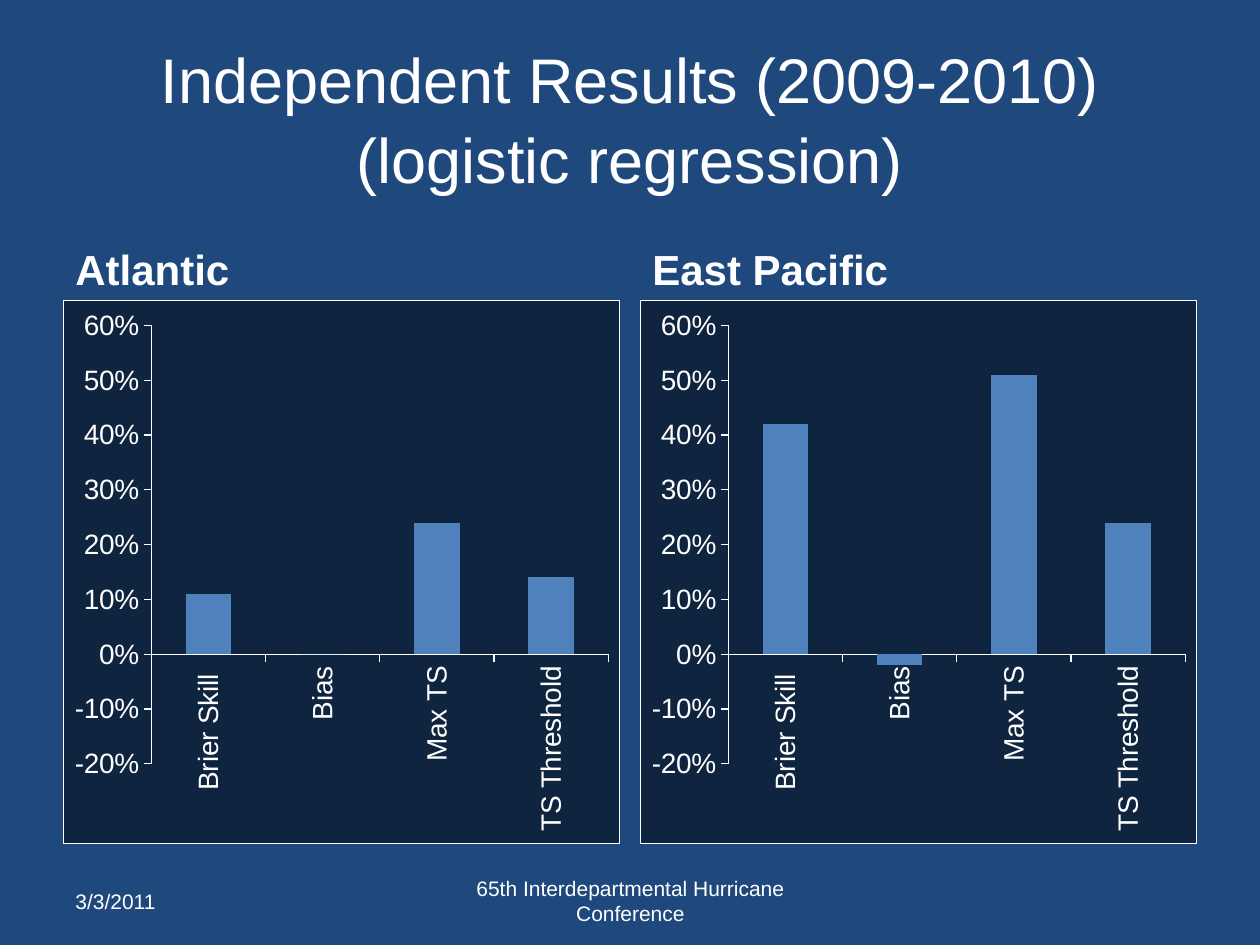
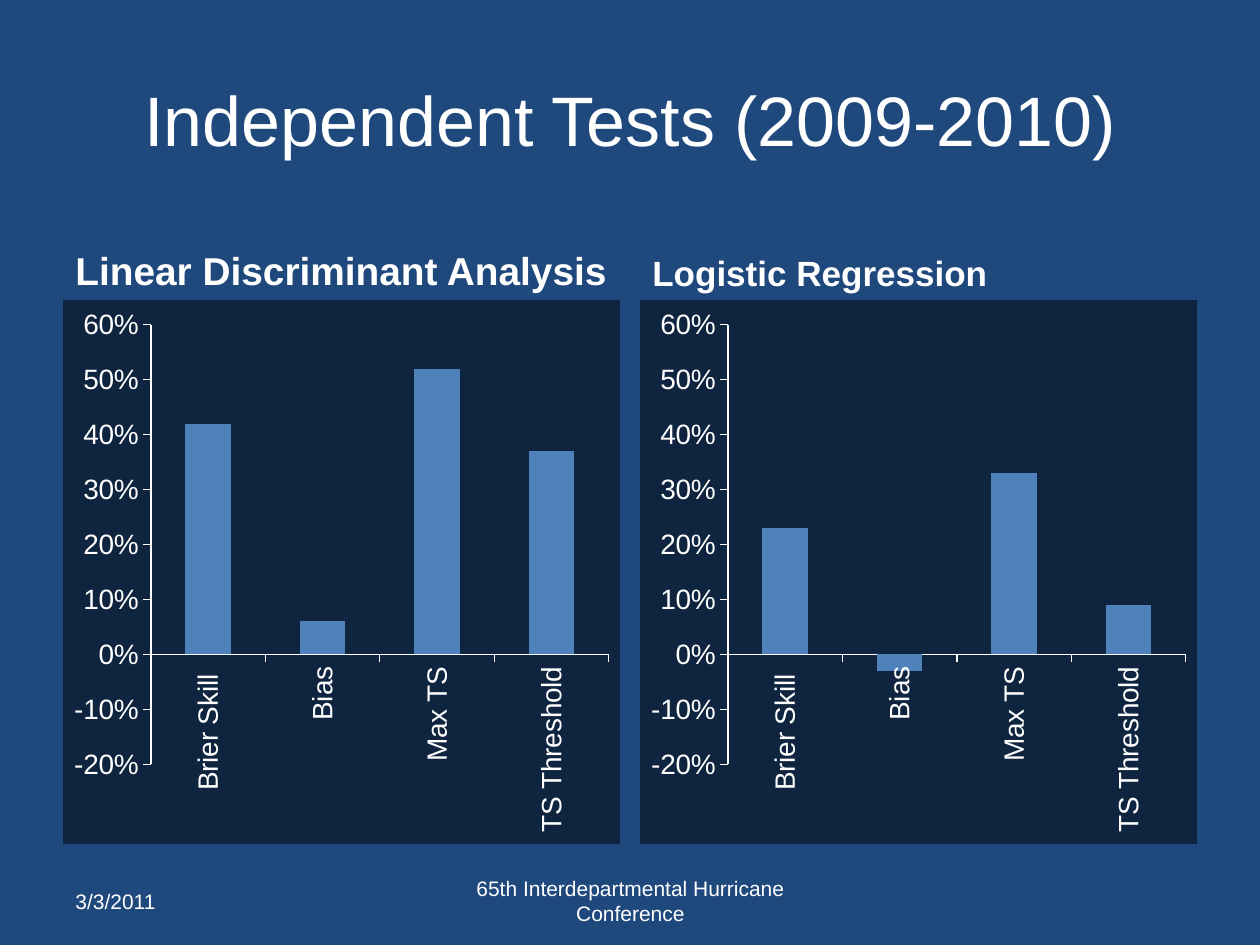
"""Builds two slides that compare forecast scores in paired column charts."""
import dataclasses

import pptx
import pptx.chart.data
import pptx.dml.color
import pptx.enum.chart
import pptx.enum.text
import pptx.oxml
import pptx.util

EMU_PER_PX = 914400 / 126
ALIGN = pptx.enum.text.PP_ALIGN
ANCHOR = pptx.enum.text.MSO_ANCHOR
DRAWING_NS = "http://schemas.openxmlformats.org/drawingml/2006/main"
CHART_NS = "http://schemas.openxmlformats.org/drawingml/2006/chart"

PAGE_SIZE = (1260, 945)
MARGIN, GAP = 63, 20
CONTENT_WIDTH = PAGE_SIZE[0] - 2 * MARGIN
PANEL_WIDTH = (CONTENT_WIDTH - GAP) // 2
SCORES = ("Brier Skill ", "Bias", "Max TS", "TS Threshold")


@dataclasses.dataclass(frozen=True)
class Theme:
    """Colours and type sizes shared by the deck."""
    font: str = "Arial"
    background: str = "1F497D"
    text: str = "FFFFFF"
    panel: str = "0F243E"
    column: str = "4F81BD"
    axis_size: float = 16
    footer_size: float = 12
    line_spacing: float = 1.05


def px(length):
    """Turn px into EMU."""
    return pptx.util.Emu(round(length * EMU_PER_PX))


def rgb(colour):
    """Turn a hex string into a colour."""
    return pptx.dml.color.RGBColor.from_string(colour)


class Painter:
    """Holds the theme and the current slide."""

    def __init__(self, deck, theme):
        """Keep the deck and its theme."""
        self.deck, self.theme, self.page = deck, theme, None

    def new_page(self):
        """Start a blank slide with the background and the footer."""
        self.page = self.deck.slides.add_slide(self.deck.slide_layouts[6])
        fill = self.page.background.fill
        fill.solid()
        fill.fore_color.rgb = rgb(self.theme.background)
        size = self.theme.footer_size
        self.text((MARGIN, 876, 294, 50), ["3/3/2011"], size)
        self.text((431, 876, 399, 50),
                  ["65th Interdepartmental Hurricane Conference"],
                  size, ALIGN.CENTER, spacing=1.0)

    def text(self, area, lines, size, align=ALIGN.LEFT, anchor=ANCHOR.MIDDLE,
             bold=False, spacing=None):
        """Add a text box whose lines are parted by line breaks."""
        box = self.page.shapes.add_textbox(*map(px, area))
        frame = box.text_frame
        frame.word_wrap = True
        frame.vertical_anchor = anchor
        para = frame.paragraphs[0]
        para.alignment = align
        para.line_spacing = spacing or self.theme.line_spacing
        for index, line in enumerate(lines):
            if index:
                para.add_line_break()
            span = para.add_run()
            span.text = line
            span.font.name = self.theme.font
            span.font.size = pptx.util.Pt(size)
            span.font.bold = bold
            span.font.color.rgb = rgb(self.theme.text)

    def title(self, lines, size):
        """Add the slide title."""
        self.text((MARGIN, 38, CONTENT_WIDTH, 157), lines, size, ALIGN.CENTER)

    def chart(self, area, values, bordered):
        """Add a column chart of the four scores."""
        data = pptx.chart.data.CategoryChartData(number_format="0%")
        data.categories = SCORES
        data.add_series("Series 1", values)
        kind = pptx.enum.chart.XL_CHART_TYPE.COLUMN_CLUSTERED
        chart = self.page.shapes.add_chart(kind, *map(px, area), data).chart
        chart.has_legend = chart.has_title = False
        chart.font.name = self.theme.font
        chart.font.size = pptx.util.Pt(self.theme.axis_size)
        chart.font.color.rgb = rgb(self.theme.text)

        plot = chart.plots[0]
        plot.gap_width = 150
        plot.vary_by_categories = False
        series = plot.series[0]
        series.invert_if_negative = False
        series.format.fill.solid()
        series.format.fill.fore_color.rgb = rgb(self.theme.column)

        for axis in (chart.category_axis, chart.value_axis):
            axis.has_major_gridlines = False
            axis.major_tick_mark = pptx.enum.chart.XL_TICK_MARK.OUTSIDE
            axis.format.line.color.rgb = rgb(self.theme.text)
            axis.format.line.width = pptx.util.Pt(0.75)
            axis.tick_labels.font.size = pptx.util.Pt(self.theme.axis_size)
        chart.value_axis.minimum_scale = -0.2
        chart.value_axis.maximum_scale = 0.6
        chart.value_axis.major_unit = 0.1
        chart.value_axis.tick_labels.number_format = "0%"
        chart.value_axis.tick_labels.number_format_is_linked = False
        self.turn_category_labels(chart)
        self.fill_chart(chart, bordered)

    def turn_category_labels(self, chart):
        """Make the category labels read upwards."""
        body = chart.element.xpath(".//c:catAx/c:txPr/a:bodyPr")[0]
        body.set("rot", "-5400000")
        body.set("vert", "horz")

    def fill_chart(self, chart, bordered):
        """Colour the chart area and draw or hide its border."""
        def solid(colour):
            return f'<a:solidFill><a:srgbClr val="{colour}"/></a:solidFill>'

        border = solid(self.theme.text) if bordered else "<a:noFill/>"
        style = pptx.oxml.parse_xml(
            f'<c:spPr xmlns:c="{CHART_NS}" xmlns:a="{DRAWING_NS}">'
            f'{solid(self.theme.panel)}<a:ln w="9525">{border}</a:ln></c:spPr>')
        chart.element.xpath("c:chart")[0].addnext(style)

    def panels(self, panels, bordered):
        """Add headed charts side by side."""
        for index, (heading, size, values) in enumerate(panels):
            left = MARGIN + index * (PANEL_WIDTH + GAP)
            self.text((left, 212, PANEL_WIDTH, 88), [heading], size,
                      anchor=ANCHOR.BOTTOM, bold=True)
            self.chart((left, 300, PANEL_WIDTH, 544), values, bordered)


def main():
    """Build and save the deck."""
    deck = pptx.Presentation()
    deck.slide_width, deck.slide_height = map(px, PAGE_SIZE)
    painter = Painter(deck, Theme())

    painter.new_page()
    painter.title(["Independent Results (2009-2010)", "(logistic regression)"], 36)
    painter.panels([
        ("Atlantic", 24, (0.11, 0, 0.24, 0.14)),
        ("East Pacific", 24, (0.42, -0.02, 0.51, 0.24)),
    ], bordered=True)

    painter.new_page()
    painter.title(["Independent Tests (2009-2010)"], 40)
    painter.panels([
        ("Linear Discriminant Analysis", 22.2, (0.42, 0.06, 0.52, 0.37)),
        ("Logistic Regression", 20, (0.23, -0.03, 0.33, 0.09)),
    ], bordered=False)

    deck.save("out.pptx")


if __name__ == "__main__":
    main()
